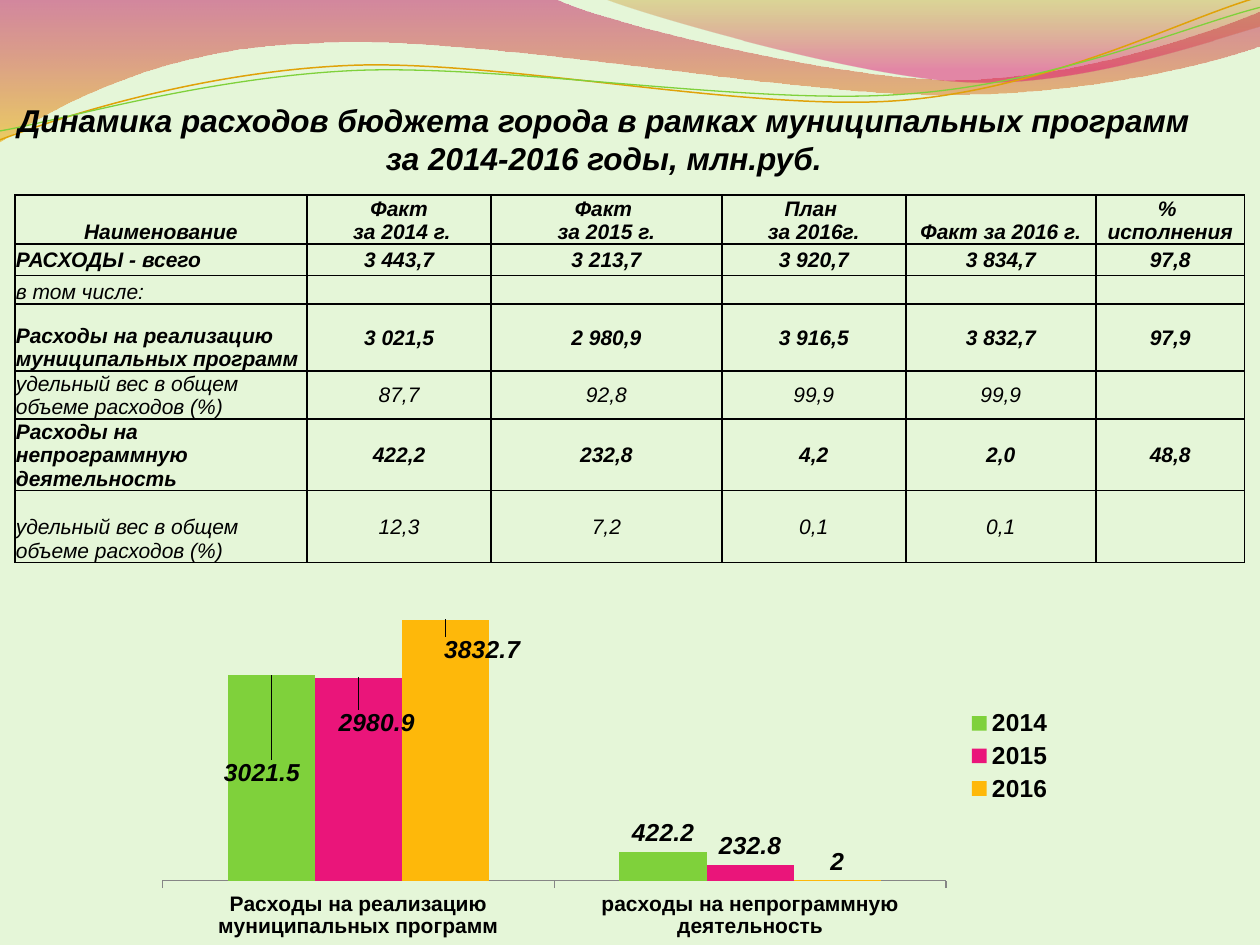
from lxml.etree import SubElement
from pptx import Presentation
from pptx.chart.data import CategoryChartData
from pptx.dml.color import RGBColor
from pptx.enum.chart import (XL_CHART_TYPE, XL_LABEL_POSITION, XL_LEGEND_POSITION,
                             XL_TICK_MARK)
from pptx.enum.text import MSO_ANCHOR, MSO_AUTO_SIZE, PP_ALIGN
from pptx.oxml import parse_xml
from pptx.oxml.ns import nsdecls, qn
from pptx.util import Cm, Pt

BACKGROUND = "E5F6D8"

# Each outline is a start point followed by lines (1 point) and curves (3 points), in cm
WAVE = [[(0, 0)], [(11.18, -0.03)],
        [(12.09, 0.43), (16.87, 1.6), (19.25, 1.6)],
        [(21.67, 1.6), (24.33, 0.66), (25.4, 0.23)], [(25.43, 0.91)],
        [(24.97, 1.12), (22.1, 1.93), (18.95, 1.91)],
        [(15.8, 1.91), (9.7, 0.71), (6.53, 0.86)],
        [(3.28, 0.91), (1.17, 2.11), (-0.03, 2.87)], [(0, 0)]]
CORNER_WAVE = [[(12.17, -0.03)],
               [(12.93, 0.28), (17.32, 1.57), (19.53, 1.65)],
               [(21.74, 1.75), (24.41, 0.81), (25.4, 0.53)], [(25.4, 0)],
               [(12.17, -0.03)]]
ORANGE_LINE = [[(0, 2.82)],
               [(1.22, 2.36), (4.01, 1.45), (7.04, 1.32)],
               [(10.03, 1.19), (15.06, 2.26), (18.11, 2.03)],
               [(21.16, 1.8), (23.83, 0.38), (25.35, -0.05)]]
GREEN_LINE = [[(0, 2.64)],
              [(1.19, 2.44), (4.17, 1.55), (7.19, 1.42)],
              [(10.24, 1.3), (15.16, 2.13), (18.21, 1.9)],
              [(21.23, 1.7), (23.9, 0.53), (25.4, 0.15)]]

COLUMN_WIDTHS = [5.89, 3.71, 4.65, 3.71, 3.83, 3.0]
ROW_HEIGHTS = [0.99, 0.63, 0.58, 1.35, 0.92, 1.35, 1.45]
SHARE = "удельный вес в общем объеме расходов (%)"
ROWS = [
    ["Наименование", "Факт\n за 2014 г.", "Факт \nза 2015 г.", "План \nза 2016г.",
     "Факт за 2016 г.", "% \nисполнения"],
    ["РАСХОДЫ - всего", "3 443,7", "3 213,7", "3 920,7", "3 834,7", "97,8"],
    ["в том числе:", "", "", "", "", ""],
    ["Расходы на реализацию муниципальных программ",
     "3 021,5", "2 980,9", "3 916,5", "3 832,7", "97,9"],
    [SHARE, "87,7", "92,8", "99,9", "99,9", ""],
    ["Расходы на непрограммную деятельность", "422,2", "232,8", "4,2", "2,0", "48,8"],
    [SHARE, "12,3", "7,2", "0,1", "0,1", ""],
]
BOLD_ROWS = {0, 1, 3, 5}

CATEGORIES = ["Расходы на реализацию муниципальных программ",
              "расходы на непрограммную деятельность"]
# name, values, colour, shift of the first label as a share of the chart size
SERIES = [("2014", (3021.5, 422.2), "7FD13B", (-0.01, 0.31)),
          ("2015", (2980.9, 232.8), "EA157A", (0.02, 0.17)),
          ("2016", (3832.7, 2), "FEB80A", (0.04, 0.13))]


def rgb(color):
    return RGBColor.from_string(color)


def manual_layout(x, y, w=None, h=None):
    """Chart layout: an offset, or an inner plot area when a size is given."""
    tags = [("x", x), ("y", y)]
    if w:
        tags = [("layoutTarget", "inner"), ("xMode", "edge"), ("yMode", "edge"),
                *tags, ("w", w), ("h", h)]
    body = "".join(f'<c:{tag} val="{val}"/>' for tag, val in tags)
    return parse_xml(f'<c:layout {nsdecls("c")}><c:manualLayout>{body}'
                     '</c:manualLayout></c:layout>')


class SlideBuilder:
    def __init__(self, slide, font="Arial", ink="000000"):
        self.s, self.font, self.ink = slide, font, ink
        fill = slide.background.fill
        fill.solid()
        fill.fore_color.rgb = rgb(BACKGROUND)

    def style(self, font, size, bold=True, italic=False):
        font.name, font.size = self.font, Pt(size)
        font.bold, font.italic = bold, italic
        font.color.rgb = rgb(self.ink)

    def outline(self, outline):
        """Freeform whose three-point segments become cubic curves."""
        start, *rest = [(Cm(x), Cm(y)) for segment in outline for x, y in segment]
        builder = self.s.shapes.build_freeform(*start)
        builder.add_line_segments(rest, close=outline[0] == outline[-1])
        sp = builder.convert_to_shape()
        sp.shadow.inherit = False
        lines = iter(list(sp._element.iter(qn("a:lnTo"))))
        for segment in outline[1:]:
            first = next(lines)
            if len(segment) == 3:
                first.tag = qn("a:cubicBezTo")
                for _ in range(2):
                    line = next(lines)
                    line.getparent().remove(line)
                    first.append(line[0])
        return sp

    def wave(self, outline, stops):
        """Closed outline with a top-down gradient of (position, colour, opacity)."""
        sp = self.outline(outline)
        sp.line.fill.background()
        sp.fill.gradient()
        sp.fill.gradient_angle = 270
        for stop, (position, color, opacity) in zip(sp.fill.gradient_stops, stops):
            stop.position = position
            stop.color.rgb = rgb(color)
            clr = stop._gs.find(qn("a:srgbClr"))
            SubElement(clr, qn("a:alpha"), val=str(opacity * 1000))

    def curve(self, outline, color, width):
        sp = self.outline(outline)
        sp.fill.background()
        sp.line.color.rgb = rgb(color)
        sp.line.width = Pt(width)

    def title(self, text, left, top, width, height):
        tf = self.s.shapes.add_textbox(Cm(left), Cm(top), Cm(width), Cm(height)).text_frame
        tf.word_wrap = True
        tf.auto_size = MSO_AUTO_SIZE.SHAPE_TO_FIT_TEXT
        tf.text = text
        for p in tf.paragraphs:
            p.alignment = PP_ALIGN.CENTER
            self.style(p.runs[0].font, 18, italic=True)
        tf.paragraphs[0]._p.get_or_add_pPr().set("marR", str(Cm(0.34)))

    def cell(self, cell, text, bold, centered, anchor):
        cell.text = text
        cell.vertical_anchor = anchor
        cell.margin_left = cell.margin_right = cell.margin_top = Cm(0.02)
        cell.margin_bottom = 0
        for p in cell.text_frame.paragraphs:
            p.alignment = PP_ALIGN.CENTER if centered else PP_ALIGN.LEFT
            for r in p.runs:
                self.style(r.font, 12, bold, True)
            if not text:
                SubElement(p._p, qn("a:endParaRPr"), sz="1200")
        for side in ("lnL", "lnR", "lnT", "lnB"):
            ln = SubElement(cell._tc.get_or_add_tcPr(), qn(f"a:{side}"), w=str(Pt(1)))
            SubElement(SubElement(ln, qn("a:solidFill")), qn("a:srgbClr"), val=self.ink)
        cell.fill.solid()
        cell.fill.fore_color.rgb = rgb(BACKGROUND)

    def table(self, rows, left, top):
        table = self.s.shapes.add_table(
            len(rows), len(rows[0]), Cm(left), Cm(top),
            Cm(sum(COLUMN_WIDTHS)), Cm(sum(ROW_HEIGHTS))).table
        table.first_row = table.horz_banding = False
        for column, width in zip(table.columns, COLUMN_WIDTHS):
            column.width = Cm(width)
        for i, (row, height) in enumerate(zip(rows, ROW_HEIGHTS)):
            table.rows[i].height = Cm(height)
            for j, text in enumerate(row):
                at_bottom = i == 0 or (j == 0 and i > 1)
                self.cell(table.cell(i, j), text, i in BOLD_ROWS, i == 0 or j > 0,
                          MSO_ANCHOR.BOTTOM if at_bottom else MSO_ANCHOR.MIDDLE)

    def chart(self, left, top, width, height):
        data = CategoryChartData()
        data.categories = CATEGORIES
        for name, values, *_ in SERIES:
            data.add_series(name, values)
        chart = self.s.shapes.add_chart(XL_CHART_TYPE.COLUMN_CLUSTERED, Cm(left), Cm(top),
                                        Cm(width), Cm(height), data).chart
        chart.has_title = False
        chart.has_legend = True
        chart.legend.position = XL_LEGEND_POSITION.RIGHT
        chart.legend.include_in_layout = False
        self.style(chart.legend.font, 14)
        axis = chart.category_axis
        axis.major_tick_mark = XL_TICK_MARK.OUTSIDE
        axis.format.line.color.rgb = rgb("868686")
        self.style(axis.tick_labels.font, 12)
        values = chart.value_axis
        values.visible = values.has_major_gridlines = False
        values.minimum_scale, values.maximum_scale = 0, 4500
        plot = chart.plots[0]
        plot.vary_by_categories = False
        plot.gap_width, plot.overlap = 150, 0
        area = chart._chartSpace.chart.plotArea
        for old in area.findall(qn("c:layout")):
            area.remove(old)
        area.insert(0, manual_layout(0.02, 0.02, 0.85, 0.81))
        for series, (_, _, color, shift) in zip(plot.series, SERIES):
            series.format.fill.solid()
            series.format.fill.fore_color.rgb = rgb(color)
            first = series.points[0].data_label
            labels = series.data_labels
            labels.show_value = True
            for label in (first, labels):
                label.position = XL_LABEL_POSITION.OUTSIDE_END
                self.style(label.font, 14, italic=True)
            first._dLbl.insert(1, manual_layout(*shift))
            self.hide_leader_lines(labels._element)

    def hide_leader_lines(self, labels):
        for old in labels.findall(qn("c:showLeaderLines")):
            labels.remove(old)
        labels.append(parse_xml(
            f'<c:extLst {nsdecls("c")}><c:ext uri="{{CE6537A1-D6FC-4f65-9D91-7224C49458BB}}"'
            ' xmlns:c15="http://schemas.microsoft.com/office/drawing/2012/chart">'
            '<c15:showLeaderLines val="0"/></c:ext></c:extLst>'))


def main():
    prs = Presentation()
    prs.slide_width, prs.slide_height = Cm(25.4), Cm(19.05)
    page = SlideBuilder(prs.slides.add_slide(prs.slide_layouts[6]))
    page.wave(WAVE, [(0, "BD0059", 45), (1, "F0AB00", 55)])
    page.wave(CORNER_WAVE, [(0, "C38B00", 30), (0.8, "E1006B", 45)])
    page.curve(ORANGE_LINE, "E0A209", 0.85)
    page.curve(GREEN_LINE, "7FD13B", 0.75)
    page.table(ROWS, 0.3, 3.93)
    page.title("Динамика расходов бюджета города в рамках муниципальных программ\n"
               "за 2014-2016 годы, млн.руб.", 0, 1.92, 24.69, 1.8)
    page.chart(2.9, 11.43, 18.59, 7.62)
    prs.save("out.pptx")


if __name__ == "__main__":
    main()
